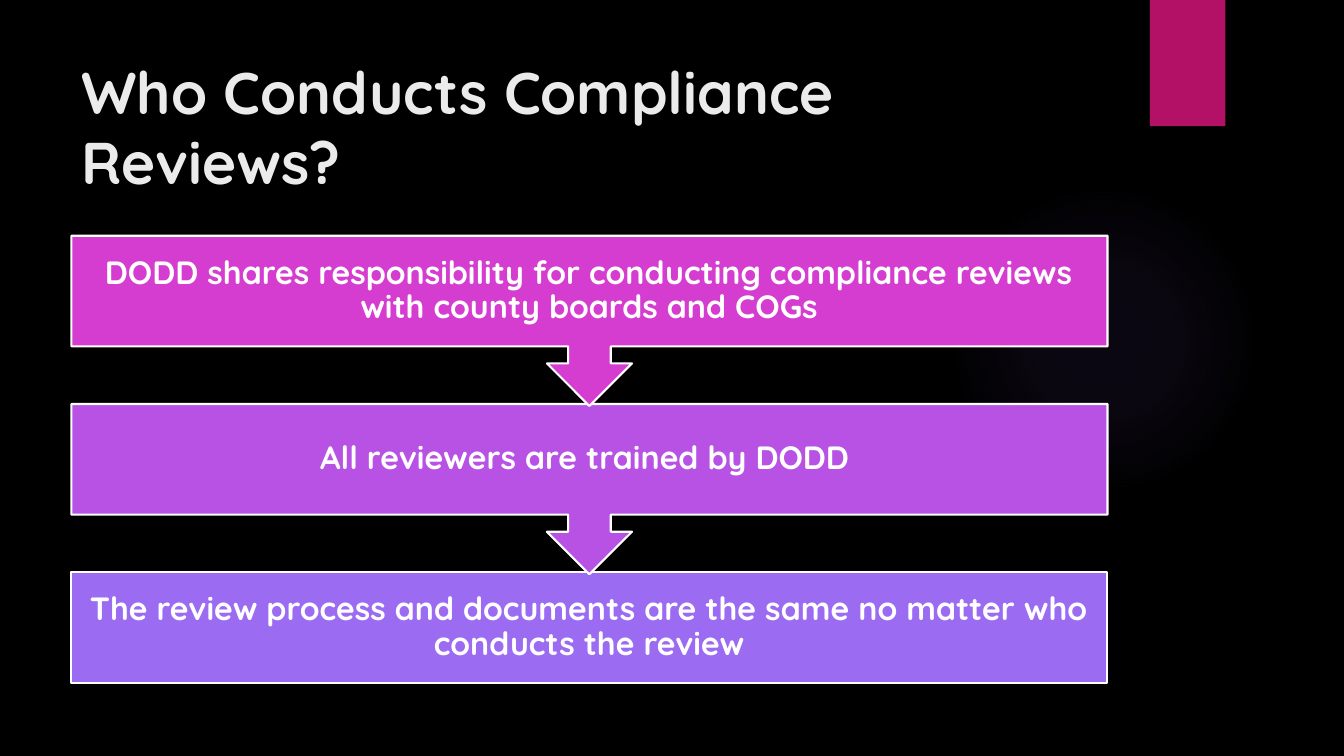
"""Builds the slide on who conducts compliance reviews, as a three-step flow."""
from pptx import Presentation
from pptx.dml.color import RGBColor
from pptx.enum.shapes import MSO_SHAPE
from pptx.enum.text import MSO_ANCHOR, PP_ALIGN
from pptx.oxml import parse_xml
from pptx.oxml.ns import nsdecls
from pptx.util import Cm, Pt

RECTANGLE = MSO_SHAPE.RECTANGLE
CALLOUT = MSO_SHAPE.UP_ARROW_CALLOUT
OVAL = MSO_SHAPE.OVAL
TOP, MIDDLE = MSO_ANCHOR.TOP, MSO_ANCHOR.MIDDLE
LEFT, CENTER = PP_ALIGN.LEFT, PP_ALIGN.CENTER

COLORS = {
    "background": "000000",
    "title": "EBEBEB",
    "white": "FFFFFF",
    "tab": "B31166",
    "pink": "D53DD0",
    "purple": "B852E5",
    "violet": "9B6BF2",
}
FONT = "Quicksand"
STEPS = [
    ("DODD shares responsibility for conducting compliance reviews with county boards and COGs",
     "pink", CALLOUT),
    ("All reviewers are trained by DODD ", "purple", CALLOUT),
    ("The review process and documents are the same no matter who conducts the review",
     "violet", RECTANGLE),
]
GLOW_STOPS = [(0, 7), (36, 6), (69, 0)]
STEP_LEFT, STEP_TOP, STEP_WIDTH = 1.8, 5.94, 26.11
STEP_HEIGHT, CALLOUT_HEIGHT, STEP_PITCH = 2.79, 4.29, 4.24


def add_text(text, *, left, top, width, height, size, color, align=LEFT,
             anchor=TOP, side=0.25, edge=0.13, spacing=1.0):
    box = page.shapes.add_textbox(Cm(left), Cm(top), Cm(width), Cm(height))
    frame = box.text_frame
    frame.word_wrap = True
    frame.vertical_anchor = anchor
    frame.margin_left = frame.margin_right = Cm(side)
    frame.margin_top = frame.margin_bottom = Cm(edge)
    para = frame.paragraphs[0]
    para.alignment = align
    para.line_spacing = spacing
    span = para.add_run()
    span.text = text
    span.font.name = FONT
    span.font.size = Pt(size)
    span.font.bold = True
    span.font.color.rgb = RGBColor.from_string(COLORS[color])


deck = Presentation()
deck.slide_width, deck.slide_height = Cm(33.87), Cm(19.05)
page = deck.slides.add_slide(deck.slide_layouts[6])
page.background.fill.solid()
page.background.fill.fore_color.rgb = RGBColor.from_string(COLORS["background"])

glow = page.shapes.add_shape(OVAL, Cm(23.9), Cm(4.65), Cm(7.82), Cm(7.82))
glow.shadow.inherit = False
glow.line.fill.background()
glow.fill.background()
stops = "".join(
    f'<a:gs pos="{position * 1000}"><a:srgbClr val="{COLORS["violet"]}">'
    f'<a:alpha val="{opacity * 1000}"/></a:srgbClr></a:gs>'
    for position, opacity in GLOW_STOPS
)
gradient = parse_xml(
    f'<a:gradFill {nsdecls("a")}><a:gsLst>{stops}</a:gsLst><a:path path="circle">'
    '<a:fillToRect l="50000" t="50000" r="50000" b="50000"/></a:path></a:gradFill>'
)
properties = glow._element.spPr
properties.replace(properties.find("{*}noFill"), gradient)

tab = page.shapes.add_shape(RECTANGLE, Cm(28.98), Cm(0), Cm(1.9), Cm(3.18))
tab.shadow.inherit = False
tab.line.fill.background()
tab.fill.solid()
tab.fill.fore_color.rgb = RGBColor.from_string(COLORS["tab"])

add_text("Who Conducts Compliance Reviews?", left=1.8, top=1.27, width=26.14,
         height=3.89, size=42, color="title")

for index, (text, color, kind) in reversed(list(enumerate(STEPS))):
    top = STEP_TOP + index * STEP_PITCH
    height = CALLOUT_HEIGHT if kind == CALLOUT else STEP_HEIGHT
    step = page.shapes.add_shape(kind, Cm(STEP_LEFT), Cm(top), Cm(STEP_WIDTH), Cm(height))
    step.shadow.inherit = False
    step.rotation = 180 if kind == CALLOUT else 0
    step.fill.solid()
    step.fill.fore_color.rgb = RGBColor.from_string(COLORS[color])
    step.line.color.rgb = RGBColor.from_string(COLORS["white"])
    step.line.width = Pt(1.5)
    add_text(text, left=STEP_LEFT, top=top, width=STEP_WIDTH, height=STEP_HEIGHT,
             size=23, color="white", align=CENTER, anchor=MIDDLE, side=0.45,
             edge=0.45, spacing=0.9)

deck.save("out.pptx")
